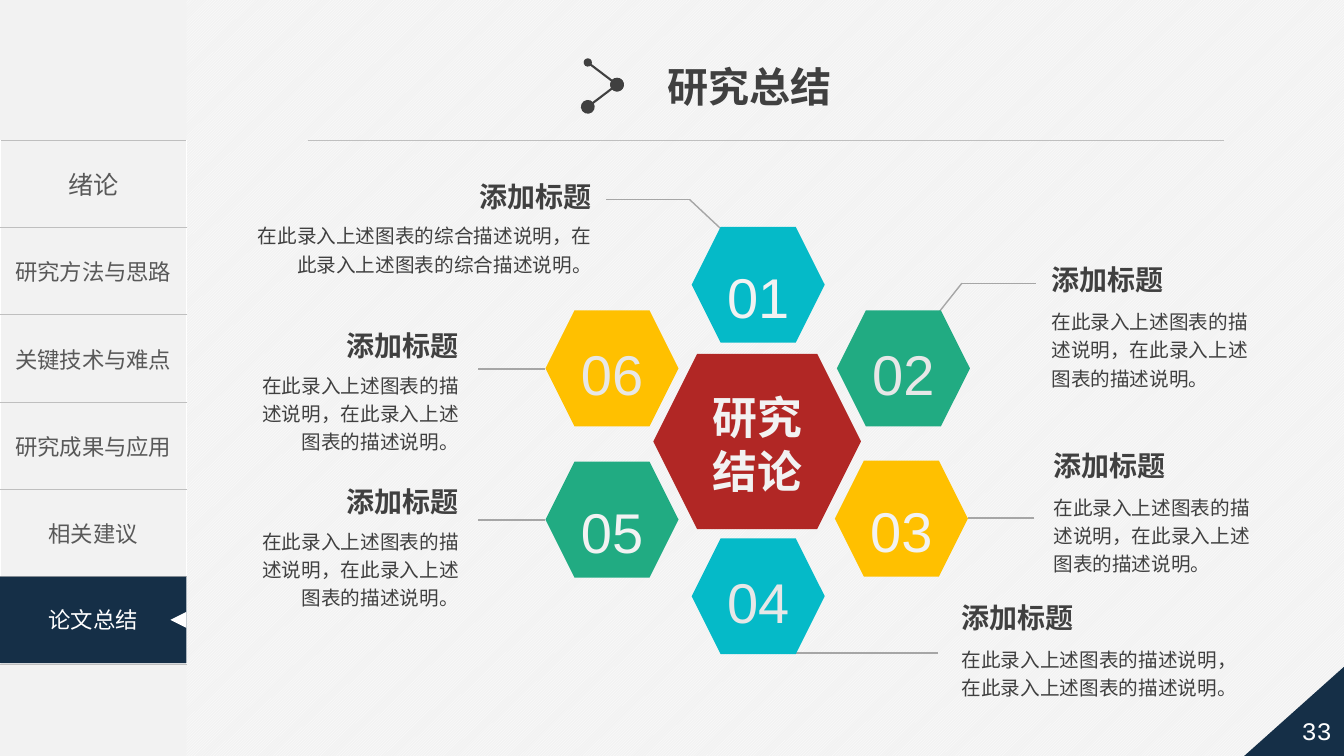
from lxml import etree
from pptx import Presentation
from pptx import util as u
from pptx.dml.color import RGBColor
from pptx.enum import dml, shapes, text
from pptx.oxml.ns import qn

PX = 9144  # 100 px to the inch
SANS, LATIN, MONO = "Noto Sans CJK SC", "Arial", "Courier New"

WHITE = RGBColor(0xFF, 0xFF, 0xFF)
PALE = RGBColor(0xF2, 0xF2, 0xF2)
SILVER = RGBColor(0xE7, 0xE7, 0xE7)
RULE = RGBColor(0xBF, 0xBF, 0xBF)
LEADER = RGBColor(0xA6, 0xA6, 0xA6)
GREY = RGBColor(0x59, 0x59, 0x59)
DARK = RGBColor(0x40, 0x40, 0x40)
NAVY = RGBColor(0x15, 0x2F, 0x47)
CYAN = RGBColor(0x05, 0xBA, 0xC8)
GREEN = RGBColor(0x21, 0xAB, 0x82)
AMBER = RGBColor(0xFF, 0xC0, 0x00)
RED = RGBColor(0xB1, 0x27, 0x25)

TITLE = "研究总结"
CENTRE = "研究结论"
PAGE = "33"
CHAPTERS = ["绪论", "研究方法与思路", "关键技术与难点", "研究成果与应用", "相关建议", "论文总结"]
HEADING = "添加标题"
DESCRIPTION = "在此录入上述图表的描述说明，在此录入上述图表的描述说明。"
LONG_DESCRIPTION = "在此录入上述图表的综合描述说明，在此录入上述图表的综合描述说明。"

# number, colour, hexagon corner, loose line spacing
HEXAGONS = [
    ("02", GREEN, (830, 308), False),
    ("01", CYAN, (686, 225), True),
    ("03", AMBER, (828, 457), True),
    ("05", GREEN, (541, 458), True),
    ("06", AMBER, (541, 308), False),
    ("04", CYAN, (686, 534), False),
]
# side of the slide, outer text edge, top, width, lines, description
CALLOUTS = [
    ("left", 597, 173, 360, 2, LONG_DESCRIPTION),
    ("left", 465, 321, 218, 3, DESCRIPTION),
    ("left", 465, 476, 218, 3, DESCRIPTION),
    ("right", 1033, 256, 234, 3, DESCRIPTION),
    ("right", 1035, 440, 234, 3, DESCRIPTION),
    ("right", 944, 591, 312, 2, DESCRIPTION),
]
LEADERS = [
    [(1026, 514), (960, 514)],
    [(789, 648), (930, 648)],
    [(541, 516), (474, 516)],
    [(541, 366), (474, 366)],
    [(715, 227), (684, 198), (601, 198)],
    [(931, 310), (954, 281), (1028, 281)],
]
# start, end, size of the start dot
ICON_LINES = [((583, 62), (612, 84), "med"), ((612, 84), (583, 106), "lg")]

SIDEBAR_WIDTH, MENU_TOP, MENU_HEIGHT = 185, 139, 520
HEX_WIDTH, HEX_HEIGHT = 132, 115
NUMBER_WIDTH = 96
HEADING_WIDTH, HEADING_HEIGHT = 132, 44
LEFT, CENTER, RIGHT = text.PP_ALIGN.LEFT, text.PP_ALIGN.CENTER, text.PP_ALIGN.RIGHT


def px(*lengths):
    return [u.Emu(length * PX) for length in lengths]


def write(frame, content, size, color, font=SANS, align=CENTER, bold=False, spacing=None):
    frame.text = content
    paragraph = frame.paragraphs[0]
    paragraph.alignment = align
    if spacing:
        paragraph.line_spacing = spacing
    run = paragraph.runs[0]
    run.font.size, run.font.bold, run.font.name = u.Pt(size), bold, font
    run.font.color.rgb = color
    east_asian = etree.SubElement(run.font._element, qn("a:ea"))
    east_asian.set("typeface", SANS)


def fit(frame, wrap=True, top=5):
    """Set the insets and let the frame grow with its text."""
    frame.word_wrap = wrap
    frame.auto_size = text.MSO_AUTO_SIZE.SHAPE_TO_FIT_TEXT
    frame.vertical_anchor = text.MSO_ANCHOR.TOP
    frame.margin_left, frame.margin_right, frame.margin_top, frame.margin_bottom = px(10, 10, top, 5)


def add_text(slide, box, content, size, color, wrap=True, top=5, **style):
    frame = slide.shapes.add_textbox(*px(*box)).text_frame
    fit(frame, wrap, top)
    write(frame, content, size, color, **style)


def add_shape(slide, kind, box, fill=None, flip=False):
    shape = slide.shapes.add_shape(kind, *px(*box))
    shape.shadow.inherit = False
    shape.line.fill.background()
    if fill is None:
        shape.fill.background()
    else:
        shape.fill.solid()
        shape.fill.fore_color.rgb = fill
    if flip:
        shape._element.spPr.find(qn("a:xfrm")).set("flipH", "1")
    return shape


def add_line(slide, start, end, color, width, dots=()):
    connector = slide.shapes.add_connector(shapes.MSO_CONNECTOR.STRAIGHT, *px(*start, *end))
    connector.line.color.rgb = color
    connector.line.width = u.Pt(width)
    for tag, size in zip(("a:headEnd", "a:tailEnd"), dots):
        dot = etree.SubElement(connector.line._get_or_add_ln(), qn(tag))
        for name, value in (("type", "oval"), ("w", size), ("len", size)):
            dot.set(name, value)
    etree.SubElement(connector._element.spPr, qn("a:effectLst"))


def add_cell_borders(cell):
    properties = cell._tc.get_or_add_tcPr()
    for position, tag in enumerate(("a:lnT", "a:lnB")):
        border = etree.Element(qn(tag), w=str(u.Pt(1)))
        fill = etree.SubElement(border, qn("a:solidFill"))
        etree.SubElement(fill, qn("a:srgbClr"), val=str(RULE))
        properties.insert(position, border)


def add_sidebar(slide):
    add_shape(slide, shapes.MSO_SHAPE.RECTANGLE, (0, 0, SIDEBAR_WIDTH, 750), PALE)
    menu = slide.shapes.add_table(
        len(CHAPTERS), 1, *px(0, MENU_TOP, SIDEBAR_WIDTH, MENU_HEIGHT)).table
    menu.first_row = menu.horz_banding = False
    for row, chapter in enumerate(CHAPTERS):
        cell = menu.cell(row, 0)
        cell.fill.solid()
        cell.fill.fore_color.rgb = PALE
        cell.vertical_anchor = text.MSO_ANCHOR.MIDDLE
        write(cell.text_frame, chapter, 16 if row else 18, GREY)
        add_cell_borders(cell)
    current = add_shape(slide, shapes.MSO_SHAPE.RECTANGLE, (0, 572, SIDEBAR_WIDTH, 86), NAVY)
    current.text_frame.vertical_anchor = text.MSO_ANCHOR.MIDDLE
    write(current.text_frame, CHAPTERS[-1], 16, WHITE)
    marker = add_shape(slide, shapes.MSO_SHAPE.ISOSCELES_TRIANGLE, (169, 607, 16, 16), WHITE)
    marker.rotation = 270


def add_page_number(slide):
    add_shape(slide, shapes.MSO_SHAPE.RIGHT_TRIANGLE, (1233, 658, 104, 93), NAVY, flip=True)
    tag = add_shape(slide, shapes.MSO_SHAPE.PENTAGON, (1245, 697, 108, 55), flip=True)
    tag.text_frame.vertical_anchor = text.MSO_ANCHOR.MIDDLE
    write(tag.text_frame, PAGE, 18, WHITE, font=MONO)


def add_header(slide):
    title = slide.shapes.title
    title.left, title.top, title.width, title.height = px(652, 56, 185, 59)
    fit(title.text_frame, wrap=False)
    write(title.text_frame, TITLE, 29.3, DARK, font=LATIN, align=LEFT, bold=True)
    add_line(slide, (305, MENU_TOP), (1214, MENU_TOP), RULE, 0.5)
    for start, end, dot in ICON_LINES:
        add_line(slide, start, end, DARK, 1.5, (dot, "lg"))


def add_hexagons(slide):
    for number, color, (left, top), loose in HEXAGONS:
        add_shape(slide, shapes.MSO_SHAPE.HEXAGON, (left, top, HEX_WIDTH, HEX_HEIGHT), color)
        offset, height = (12, 83) if loose else (19, 77)
        box = (left + (HEX_WIDTH - NUMBER_WIDTH) // 2, top + offset, NUMBER_WIDTH, height)
        add_text(slide, box, number, 40, PALE if loose else SILVER, top=10,
                 font=LATIN, spacing=1.2 if loose else None)
    add_shape(slide, shapes.MSO_SHAPE.HEXAGON, (648, 351, 206, 174), RED)
    add_text(slide, (688, 377, 127, 121), CENTRE, 32, PALE, top=10, bold=True)


def add_callouts(slide):
    for points in LEADERS:
        for start, end in zip(points, points[1:]):
            add_line(slide, start, end, LEADER, 1)
    for side, edge, top, width, lines, description in CALLOUTS:
        on_left = side == "left"
        align, gap = (RIGHT, 40) if on_left else (LEFT, 42)
        heading_left = edge - HEADING_WIDTH if on_left else edge
        body_left = edge - width if on_left else edge
        add_text(slide, (heading_left, top, HEADING_WIDTH, HEADING_HEIGHT), HEADING, 20, DARK,
                 wrap=False, align=align, bold=True)
        add_text(slide, (body_left, top + gap, width, 11 + 28 * lines), description, 14, DARK,
                 align=align, spacing=1.2)


def main():
    presentation = Presentation()
    presentation.slide_width, presentation.slide_height = u.Inches(13.33), u.Inches(7.5)
    slide = presentation.slides.add_slide(presentation.slide_layouts[5])
    background = slide.background.fill
    background.patterned()
    background.pattern = dml.MSO_PATTERN.LIGHT_UPWARD_DIAGONAL
    background.fore_color.rgb, background.back_color.rgb = WHITE, PALE
    add_sidebar(slide)
    add_page_number(slide)
    add_header(slide)
    add_callouts(slide)
    add_hexagons(slide)
    presentation.save("out.pptx")


if __name__ == "__main__":
    main()
